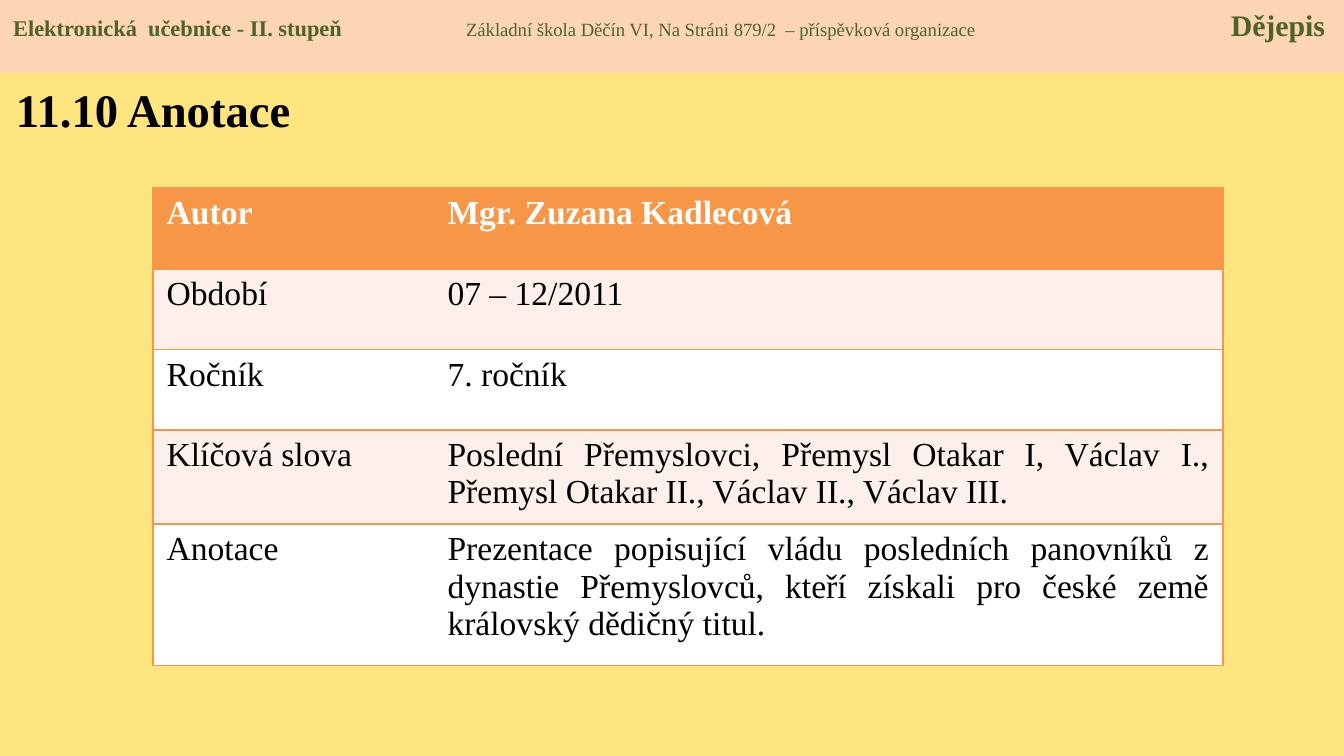
from lxml import etree
from pptx import Presentation
from pptx.dml.color import RGBColor
from pptx.enum.shapes import MSO_SHAPE as Shape
from pptx.enum.text import MSO_ANCHOR as Anchor, PP_ALIGN as Align
from pptx.oxml.ns import qn
from pptx.util import Inches, Pt

BACKGROUND = RGBColor(0xFF, 0xE5, 0x80)
PEACH = RGBColor(0xFC, 0xD5, 0xB5)
GREEN = RGBColor(0x4F, 0x62, 0x28)
ORANGE = RGBColor(0xF7, 0x96, 0x46)
BLUSH = RGBColor(0xFD, 0xEF, 0xE9)
WHITE = RGBColor(0xFF, 0xFF, 0xFF)
BLACK = RGBColor(0x00, 0x00, 0x00)

SLIDE_WIDTH = 10
SLIDE_HEIGHT = SLIDE_WIDTH * 9 / 16

HEADER = [
    ("Elektronická  učebnice - II. stupeň", 12, True),
    ("\tZákladní škola Děčín VI, Na Stráni 879/2  – příspěvková organizace", 10, False),
    ("\tDějepis", 16, True),
]
HEADER_TABS = [3.37, 9.06]

COLUMN_WIDTHS = [2.09, 5.87]
ROW_HEIGHTS = [0.6, 0.6, 0.6, 0.7, 1.05]
ANNOTATION = [
    ("Autor", "Mgr. Zuzana Kadlecová"),
    ("Období", "07 – 12/2011"),
    ("Ročník", "7. ročník"),
    ("Klíčová slova", "Poslední Přemyslovci, Přemysl Otakar I, Václav I., "
                      "Přemysl Otakar II., Václav II., Václav III."),
    ("Anotace", "Prezentace popisující vládu posledních panovníků z dynastie Přemyslovců, "
                "kteří získali pro české země královský dědičný titul."),
]
JUSTIFIED_ROWS = (3, 4)


def add_text(paragraph, text, size=18, color=BLACK, bold=False, align=Align.LEFT):
    paragraph.alignment = align
    run = paragraph.add_run()
    run.text = text
    run.font.name = "Times New Roman"
    run.font.size = Pt(size)
    run.font.bold = bold
    run.font.color.rgb = color


def set_tabs(paragraph, positions):
    tab_list = etree.SubElement(paragraph._p.get_or_add_pPr(), qn("a:tabLst"))
    for position in positions:
        etree.SubElement(tab_list, qn("a:tab"), pos=str(Inches(position)), algn="l")


def set_borders(cell, colors):
    """Draw the sides that have a colour and hide the others."""
    properties = cell._tc.get_or_add_tcPr()
    for index, side in enumerate(("lnL", "lnR", "lnT", "lnB")):
        line = etree.Element(qn(f"a:{side}"), w=str(Pt(1)))
        color = colors[index]
        if color is None:
            etree.SubElement(line, qn("a:noFill"))
        else:
            fill = etree.SubElement(line, qn("a:solidFill"))
            etree.SubElement(fill, qn("a:srgbClr"), val=str(color))
        properties.insert(index, line)


class SlideBuilder:
    def __init__(self, slide):
        self.slide = slide
        slide.background.fill.solid()
        slide.background.fill.fore_color.rgb = BACKGROUND

    def header(self, left, top, width, height):
        shape = self.slide.shapes.add_shape(
            Shape.RECTANGLE, Inches(left), Inches(top), Inches(width), Inches(height))
        shape.shadow.inherit = False
        shape.fill.solid()
        shape.fill.fore_color.rgb = PEACH
        shape.line.fill.background()
        frame = shape.text_frame
        frame.vertical_anchor = Anchor.TOP
        frame.margin_top = Inches(0.05)
        paragraph = frame.paragraphs[0]
        for text, size, bold in HEADER:
            add_text(paragraph, text, size=size, color=GREEN, bold=bold)
        set_tabs(paragraph, HEADER_TABS)

    def title(self, text, left, top, width, height):
        box = self.slide.shapes.add_textbox(
            Inches(left), Inches(top), Inches(width), Inches(height))
        frame = box.text_frame
        frame.word_wrap = True
        frame.margin_top = Inches(0.05)
        add_text(frame.paragraphs[0], text, size=25, bold=True)

    def table(self, rows, left, top):
        table = self.slide.shapes.add_table(
            len(rows), len(COLUMN_WIDTHS), Inches(left), Inches(top),
            Inches(sum(COLUMN_WIDTHS)), Inches(sum(ROW_HEIGHTS))).table
        table.horz_banding = False
        for column, width in zip(table.columns, COLUMN_WIDTHS):
            column.width = Inches(width)
        for row, height in zip(table.rows, ROW_HEIGHTS):
            row.height = Inches(height)
        for row_index, texts in enumerate(rows):
            heading = row_index == 0
            fill = ORANGE if heading else (WHITE, BLUSH)[row_index % 2]
            for column_index, text in enumerate(texts):
                cell = table.cell(row_index, column_index)
                cell.fill.solid()
                cell.fill.fore_color.rgb = fill
                justified = column_index == 1 and row_index in JUSTIFIED_ROWS
                add_text(cell.text_frame.paragraphs[0], text, bold=heading,
                         color=WHITE if heading else BLACK,
                         align=Align.JUSTIFY if justified else Align.LEFT)
                outer = (ORANGE, None) if column_index == 0 else (None, ORANGE)
                set_borders(cell, (*outer, ORANGE, ORANGE))


def main():
    presentation = Presentation()
    presentation.slide_width = Inches(SLIDE_WIDTH)
    presentation.slide_height = Inches(SLIDE_HEIGHT)
    builder = SlideBuilder(presentation.slides.add_slide(presentation.slide_layouts[6]))

    # Header band and title
    builder.header(0, 0, SLIDE_WIDTH, 0.54)
    builder.title("11.10 Anotace", 0.02, 0.55, 4.19, 0.65)

    # Annotation table
    builder.table(ANNOTATION, 1.14, 1.4)

    presentation.save("out.pptx")


if __name__ == "__main__":
    main()
